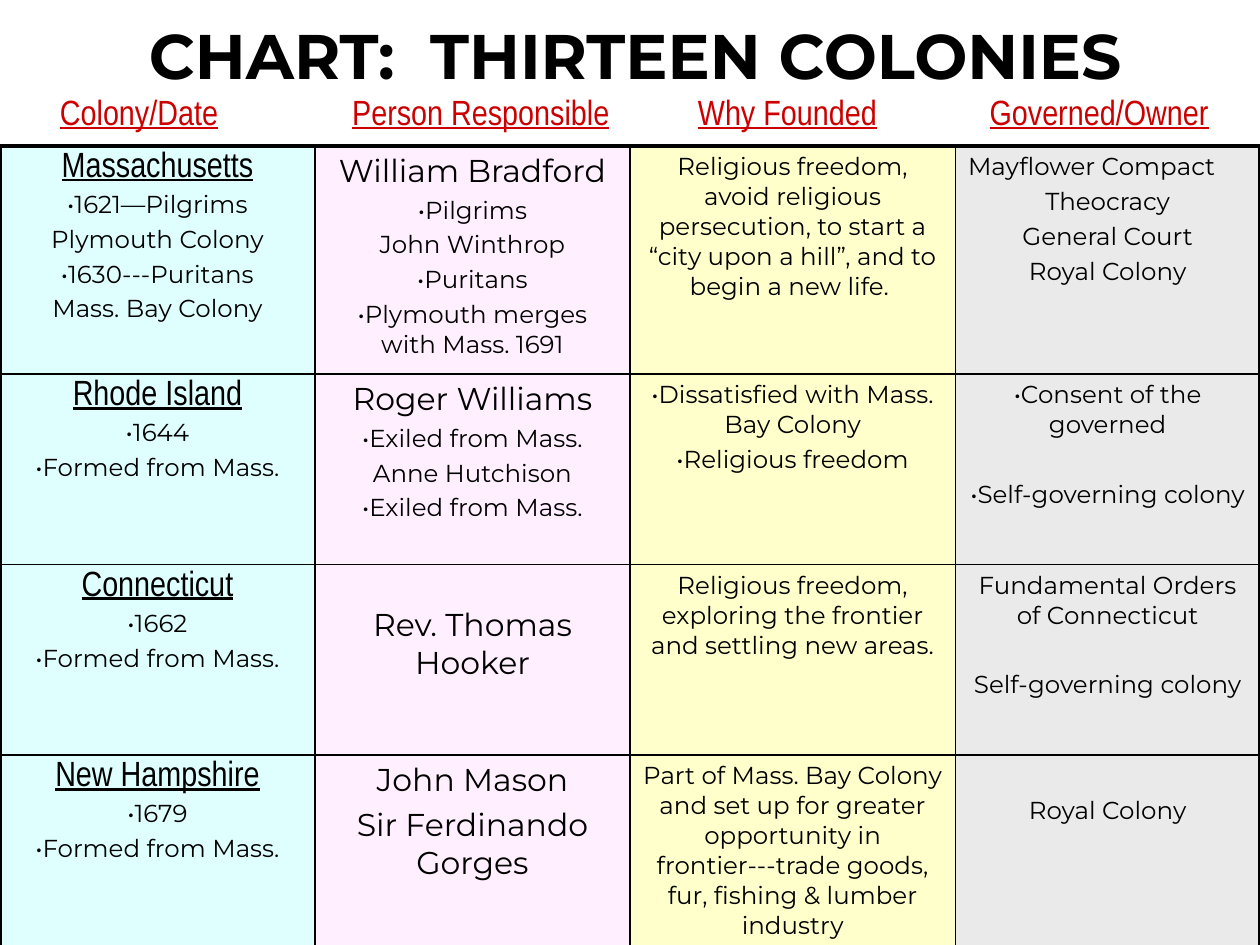
from dataclasses import dataclass

from lxml import etree
from pptx import Presentation
from pptx.dml.color import RGBColor
from pptx.enum.text import MSO_ANCHOR, MSO_AUTO_SIZE, PP_ALIGN
from pptx.oxml.ns import qn
from pptx.util import Cm, Pt

LEFT, CENTER = PP_ALIGN.LEFT, PP_ALIGN.CENTER
TOP = MSO_ANCHOR.TOP
NO_AUTOFIT = MSO_AUTO_SIZE.NONE
TITLE_ONLY = 5

COLORS = {
    "ink": "000000",
    "heading": "CC0000",
    "colony": "DFFFFF",
    "person": "FFEFFF",
    "reason": "FFFFCC",
    "government": "EAEAEA",
}
BODY_FONT, NARROW_FONT = "Montserrat", "Arial Narrow"
INNER, OUTER = 1, 2.25  # border widths in points
BLANK_LINE = 20  # extra gap in points, one body line high

COLUMN_FILLS = ["colony", "person", "reason", "government"]
COLUMN_WIDTHS = [6.35, 6.35, 6.56, 6.14]
ROW_HEIGHTS = [4.6, 3.84, 3.84, 3.84]
HEADINGS = [  # text and tab position in cm
    ("Colony/Date", 0.96),
    ("Person Responsible", 6.85),
    ("Why Founded", 13.82),
    ("Governed/Owner", 19.7),
]


@dataclass
class Line:
    text: str
    size: int = 14
    bullet: bool = False
    align: PP_ALIGN = CENTER
    gap: float = 0
    colony: bool = False


def colony(text):
    return Line(text, size=20, colony=True)


def person(text, gap=0):
    return Line(text, size=18, gap=gap)


def bullet(text, gap=0):
    return Line(text, bullet=True, gap=gap)


ROWS = [
    [
        [colony("Massachusetts"), bullet("1621—Pilgrims"), Line("Plymouth Colony"),
         bullet("1630---Puritans"), Line("Mass. Bay Colony")],
        [person("William Bradford"), bullet("Pilgrims"), Line("John Winthrop"),
         bullet("Puritans"), bullet("Plymouth merges with Mass. 1691")],
        [Line("Religious freedom, avoid religious persecution, to start a "
              "“city upon a hill”, and to begin a new life. ")],
        [Line("Mayflower Compact", align=LEFT), Line("Theocracy"),
         Line("General Court"), Line("Royal Colony")],
    ],
    [
        [colony("Rhode Island"), bullet("1644"), bullet("Formed from Mass.")],
        [person("Roger Williams"), bullet("Exiled from Mass."),
         Line("Anne Hutchison"), bullet("Exiled from Mass.")],
        [bullet("Dissatisfied with Mass. Bay Colony"), bullet("Religious freedom")],
        [bullet("Consent of the governed"),
         bullet("Self-governing colony", gap=BLANK_LINE)],
    ],
    [
        [colony("Connecticut"), bullet("1662"), bullet("Formed from Mass.")],
        [person("Rev. Thomas Hooker", gap=BLANK_LINE)],
        [Line("Religious freedom, exploring the frontier and settling new areas.")],
        [Line("Fundamental Orders of Connecticut"),
         Line("Self-governing colony", gap=BLANK_LINE)],
    ],
    [
        [colony("New Hampshire"), bullet("1679"), bullet("Formed from Mass.")],
        [person("John Mason"), person("Sir Ferdinando Gorges")],
        [Line("Part of Mass. Bay Colony and set up for greater opportunity in "
              "frontier---trade goods, fur, fishing & lumber industry")],
        [Line("Royal Colony", gap=BLANK_LINE)],
    ],
]


def rgb(name):
    return RGBColor.from_string(COLORS[name])


def set_font(font, name, size, color="ink"):
    font.name = name
    font.size = Pt(size)
    font.color.rgb = rgb(color)


def add_title(page):
    title = page.shapes.title
    title.left, title.top, title.width, title.height = Cm(2.11), Cm(0.2), Cm(21.39), Cm(1.07)
    frame = title.text_frame
    frame.text = "CHART:  THIRTEEN COLONIES"
    frame.word_wrap = False
    frame.auto_size = NO_AUTOFIT
    frame.vertical_anchor = TOP
    para = frame.paragraphs[0]
    para.alignment = CENTER
    set_font(para.font, BODY_FONT, 36)
    para.font.bold = True


def add_headings(page):
    box = page.shapes.add_textbox(0, Cm(1.7), Cm(25.4), Cm(1.09))
    box.text_frame.word_wrap = True
    para = box.text_frame.paragraphs[0]
    set_font(para.font, NARROW_FONT, 20, "heading")
    tabs = etree.Element(qn("a:tabLst"))
    for text, position in HEADINGS:
        etree.SubElement(tabs, qn("a:tab"), pos=str(Cm(position)), algn="l")
        para.add_run().text = "\t"
        span = para.add_run()
        span.text = text
        span.font.underline = True
    # Tab stops come before the default run properties
    para._p.get_or_add_pPr().insert(0, tabs)


def set_bullet(para):
    properties = para._p.get_or_add_pPr()
    properties.set("marL", "0")
    properties.set("indent", "0")
    defaults = properties.find(qn("a:defRPr"))
    defaults.addprevious(etree.Element(qn("a:buFont"), typeface=BODY_FONT))
    defaults.addprevious(etree.Element(qn("a:buChar"), char="•"))


def set_borders(cell, widths):
    properties = cell._tc.get_or_add_tcPr()
    for index, (side, width) in enumerate(widths.items()):
        border = etree.Element(qn(f"a:ln{side}"), w=str(Pt(width)))
        fill = etree.SubElement(border, qn("a:solidFill"))
        etree.SubElement(fill, qn("a:srgbClr"), val=COLORS["ink"])
        properties.insert(index, border)


def fill_cell(cell, lines, color):
    cell.fill.solid()
    cell.fill.fore_color.rgb = rgb(color)
    cell.vertical_anchor = TOP
    cell.margin_top = Pt(3.6 + lines[0].gap)
    frame = cell.text_frame
    for index, line in enumerate(lines):
        para = frame.add_paragraph() if index else frame.paragraphs[0]
        para.text = line.text
        para.alignment = line.align
        para.space_before = Pt(0.2 * line.size + (line.gap if index else 0))
        set_font(para.font, NARROW_FONT if line.colony else BODY_FONT, line.size)
        para.font.underline = line.colony
        if line.bullet:
            set_bullet(para)


def add_colony_table(page):
    last_row, last_column = len(ROWS) - 1, len(COLUMN_FILLS) - 1
    table = page.shapes.add_table(
        len(ROWS), len(COLUMN_FILLS), 0, Cm(2.94),
        Cm(sum(COLUMN_WIDTHS)), Cm(sum(ROW_HEIGHTS))).table
    table.first_row = table.horz_banding = False
    for column, width in zip(table.columns, COLUMN_WIDTHS):
        column.width = Cm(width)
    for row, height in zip(table.rows, ROW_HEIGHTS):
        row.height = Cm(height)
    for r, row in enumerate(ROWS):
        for c, lines in enumerate(row):
            cell = table.cell(r, c)
            fill_cell(cell, lines, COLUMN_FILLS[c])
            set_borders(cell, {
                "L": OUTER if c == 0 else INNER,
                "R": OUTER if c == last_column else INNER,
                "T": OUTER if r == 0 else INNER,
                "B": OUTER if r == last_row else INNER,
            })


def main():
    deck = Presentation()
    deck.slide_width, deck.slide_height = Cm(25.4), Cm(19.05)
    page = deck.slides.add_slide(deck.slide_layouts[TITLE_ONLY])
    add_colony_table(page)
    add_title(page)
    add_headings(page)
    deck.save("out.pptx")


if __name__ == "__main__":
    main()
